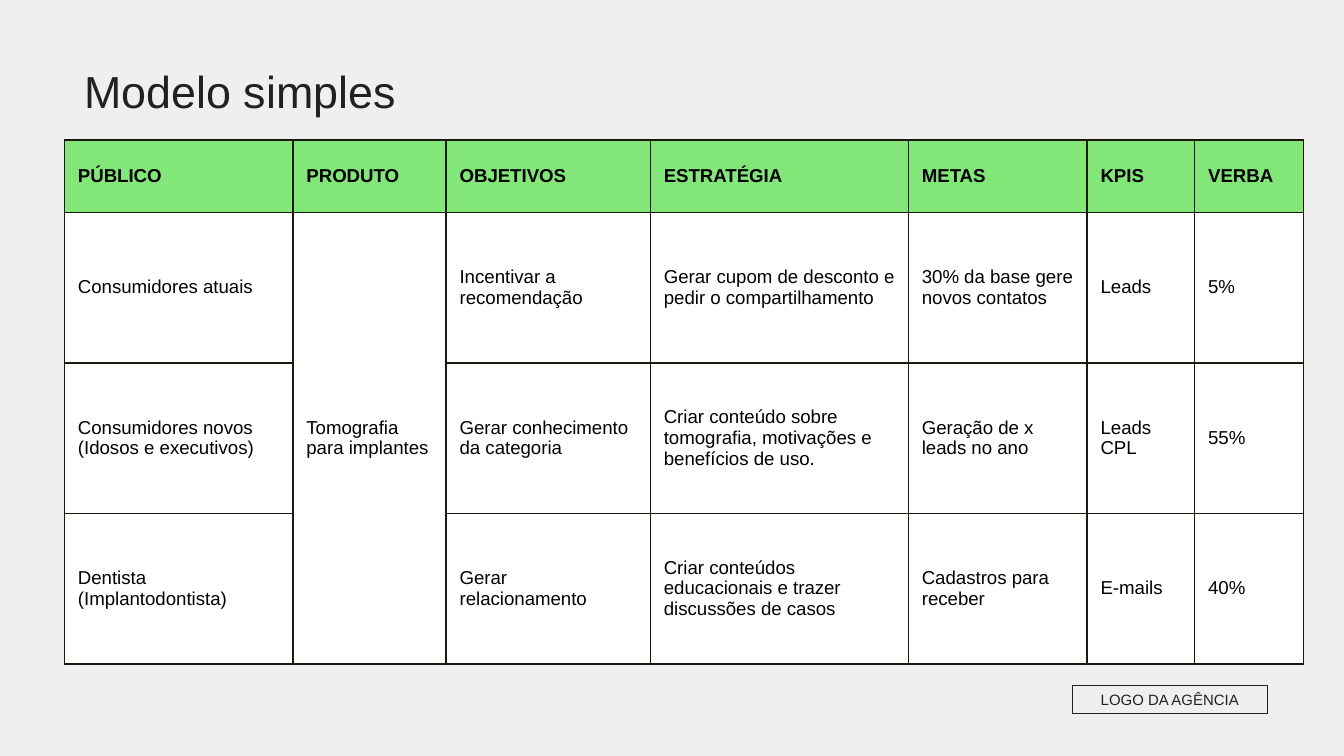
from dataclasses import dataclass

from lxml import etree
from pptx import Presentation
from pptx import util as u
from pptx.dml.color import RGBColor
from pptx.enum import shapes, text
from pptx.oxml import ns


@dataclass(frozen=True)
class Theme:
    """Colours, font and type sizes of the deck."""
    font: str = "Arial"
    background: str = "EFEFEF"
    ink: str = "212121"
    header: str = "82E678"
    cell: str = "FFFFFF"
    cell_text: str = "000000"
    border: str = "1D1A0D"
    title_size: float = 24
    table_size: float = 10
    label_size: float = 8


THEME = Theme()
COLUMNS = [1.7, 1.14, 1.52, 1.92, 1.33, 0.8, 0.81]
ROWS = [0.54, 1.12, 1.12, 1.12]
PLAN = [
    ["PÚBLICO", "PRODUTO", "OBJETIVOS", "ESTRATÉGIA", "METAS", "KPIS", "VERBA"],
    ["Consumidores atuais", "Tomografia para implantes", "Incentivar a recomendação",
     "Gerar cupom de desconto e pedir o compartilhamento",
     "30% da base gere novos contatos", "Leads", "5%"],
    ["Consumidores novos (Idosos e executivos)", "", "Gerar conhecimento da categoria",
     "Criar conteúdo sobre tomografia, motivações e benefícios de uso.",
     "Geração de x leads no ano", "Leads\nCPL", "55%"],
    ["Dentista (Implantodontista)", "", "Gerar relacionamento",
     "Criar conteúdos educacionais e trazer discussões de casos",
     "Cadastros para receber", "E-mails", "40%"],
]


def colour(value):
    """Return the colour for a hex string."""
    return RGBColor.from_string(value)


def write(frame, content, size, ink, bold=False, align=text.PP_ALIGN.LEFT):
    """Fill a text frame and style each paragraph."""
    frame.text = content
    frame.word_wrap = True
    for para in frame.paragraphs:
        para.alignment = align
        para.font.name = THEME.font
        para.font.size = u.Pt(size)
        para.font.bold = bold
        para.font.color.rgb = colour(ink)


def outline_cell(cell, width=1):
    """Draw a line on all four sides of a cell."""
    properties = cell._tc.get_or_add_tcPr()
    for index, side in enumerate(("lnL", "lnR", "lnT", "lnB")):
        line = etree.Element(ns.qn(f"a:{side}"), w=str(u.Pt(width)))
        fill = etree.SubElement(line, ns.qn("a:solidFill"))
        etree.SubElement(fill, ns.qn("a:srgbClr"), val=THEME.border)
        properties.insert(index, line)


def add_title(page, left, top, width, height):
    """Place the slide title in its box."""
    box = page.shapes.add_textbox(*map(u.Inches, (left, top, width, height)))
    frame = box.text_frame
    write(frame, "Modelo simples", THEME.title_size, THEME.ink)
    frame.margin_left = frame.margin_right = frame.margin_top = frame.margin_bottom = 0
    frame.vertical_anchor = text.MSO_ANCHOR.MIDDLE
    frame.paragraphs[0].line_spacing = 0.93


def add_plan(page, left, top):
    """Place the plan table with its top left corner at the given point."""
    size = (sum(COLUMNS), sum(ROWS))
    table = page.shapes.add_table(len(ROWS), len(COLUMNS),
                                  *map(u.Inches, (left, top, *size))).table
    for column, width in zip(table.columns, COLUMNS):
        column.width = u.Inches(width)
    for row, height, values in zip(table.rows, ROWS, PLAN):
        row.height = u.Inches(height)
        heading = values is PLAN[0]
        for cell, value in zip(row.cells, values):
            write(cell.text_frame, value, THEME.table_size, THEME.cell_text, heading)
            cell.vertical_anchor = text.MSO_ANCHOR.MIDDLE
            cell.fill.solid()
            cell.fill.fore_color.rgb = colour(THEME.header if heading else THEME.cell)
            outline_cell(cell)
    table.cell(1, 1).merge(table.cell(len(ROWS) - 1, 1))


def add_agency_label(page, left, top, width, height):
    """Place the outlined agency label in its box."""
    box = page.shapes.add_shape(shapes.MSO_SHAPE.RECTANGLE,
                                *map(u.Inches, (left, top, width, height)))
    box.shadow.inherit = False
    box.fill.background()
    box.line.color.rgb = colour(THEME.ink)
    box.line.width = u.Pt(0.75)
    write(box.text_frame, "LOGO DA AGÊNCIA", THEME.label_size, THEME.ink,
          align=text.PP_ALIGN.CENTER)
    box.text_frame.vertical_anchor = text.MSO_ANCHOR.MIDDLE


def main():
    """Build and save the deck."""
    deck = Presentation()
    deck.slide_width = u.Inches(10)
    deck.slide_height = deck.slide_width * 9 // 16
    page = deck.slides.add_slide(deck.slide_layouts[6])
    page.background.fill.solid()
    page.background.fill.fore_color.rgb = colour(THEME.background)
    add_title(page, 0.63, 0.47, 6.93, 0.45)
    add_plan(page, 0.48, 1.04)
    add_agency_label(page, 7.98, 5.1, 1.45, 0.21)
    deck.save("out.pptx")


if __name__ == "__main__":
    main()
